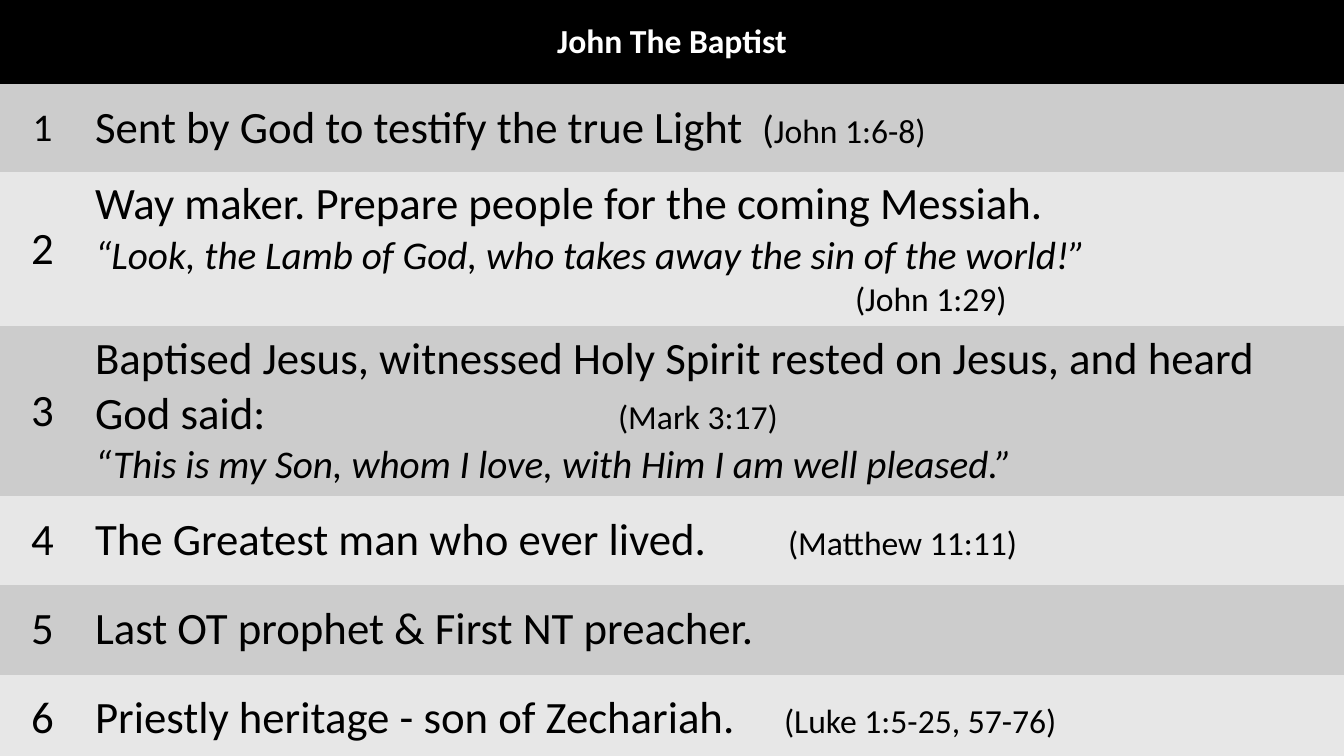
from dataclasses import dataclass

from lxml.etree import SubElement
from pptx import Presentation
from pptx.dml.color import RGBColor as RGB
from pptx.enum.text import MSO_ANCHOR as Anchor, PP_ALIGN as Align
from pptx.oxml.ns import qn
from pptx.util import Pt

EMU_PER_PX = 914400 / 100.8
NO_GRID_STYLE = "{2D5ABB26-0587-4C30-8999-92F81FD0307C}"


def px(length):
    return round(length * EMU_PER_PX)


@dataclass(frozen=True)
class Theme:
    font: str = "Calibri"
    black: RGB = RGB(0, 0, 0)
    white: RGB = RGB(255, 255, 255)
    bands: tuple = (RGB(0xCC, 0xCC, 0xCC), RGB(0xE7, 0xE7, 0xE7))
    point: int = 32
    quote: int = 28
    reference: int = 24
    heading: int = 24


THEME = Theme()


@dataclass(frozen=True)
class Line:
    """A paragraph: (text, size) runs, with an optional tab stop or indent in px."""
    runs: tuple
    tab: int = 0
    indent: int = 0
    italic: bool = False
    bold: bool = False
    align: Align = Align.LEFT


class SlideBuilder:
    def __init__(self, deck, theme):
        self.theme = theme
        self.slide = deck.slides.add_slide(deck.slide_layouts[6])
        backdrop = self.slide.background.fill
        backdrop.solid()
        backdrop.fore_color.rgb = theme.black

    def table(self, widths, heights):
        frame = self.slide.shapes.add_table(
            len(heights), len(widths), 0, 0, px(sum(widths)), px(sum(heights)))
        table = frame.table
        table.first_row = table.horz_banding = False
        table._tbl.tblPr.find(qn("a:tableStyleId")).text = NO_GRID_STYLE
        for column, width in zip(table.columns, widths):
            column.width = px(width)
        for row, height in zip(table.rows, heights):
            row.height = px(height)
        return table

    def cell(self, cell, lines, fill, color):
        cell.fill.solid()
        cell.fill.fore_color.rgb = fill
        cell.vertical_anchor = Anchor.MIDDLE
        frame = cell.text_frame
        for index, line in enumerate(lines):
            paragraph = frame.add_paragraph() if index else frame.paragraphs[0]
            self.line(paragraph, line, color)

    def line(self, paragraph, line, color):
        paragraph.alignment = line.align
        properties = paragraph._p.get_or_add_pPr()
        if line.indent:
            properties.set("marL", str(px(line.indent)))
            properties.set("indent", "0")
        if line.tab:
            stops = SubElement(properties, qn("a:tabLst"))
            SubElement(stops, qn("a:tab"), pos=str(px(line.tab)), algn="l")
        font = paragraph.font
        font.name = self.theme.font
        font.color.rgb = color
        font.bold, font.italic = line.bold, line.italic
        sizes = {size for _, size in line.runs}
        if len(sizes) == 1:
            font.size = Pt(sizes.pop())
        for text, size in line.runs:
            run = paragraph.add_run()
            run.text = text
            if sizes:
                run.font.size = Pt(size)


def point(text, reference="", tab=0):
    runs = ((text, THEME.point),)
    if reference:
        runs += (("\t" + reference, THEME.reference),)
    return Line(runs, tab=tab)


def quote(text):
    return Line(((text, THEME.quote),), italic=True)


# Row height, size of the number, and lines of each point
POINTS = [
    (88, THEME.quote, [Line((
        ("Sent by God to testify the true Light", THEME.point),
        ("\t(", THEME.quote),
        ("John 1:6-8)", THEME.reference)), tab=667)]),
    (147, THEME.point, [
        point("Way maker. Prepare people for the coming Messiah."),
        quote("“Look, the Lamb of God, who takes away the sin of the world!”"),
        Line((("(John 1:29)", THEME.reference),), indent=760)]),
    (170, THEME.point, [
        point("Baptised Jesus, witnessed Holy Spirit rested on Jesus, "
              "and heard God said:", "(Mark 3:17)", 523),
        quote("“This is my Son, whom I love, with Him I am well pleased.”")]),
    (89, THEME.point, [
        point("The Greatest man who ever lived.", "(Matthew 11:11)", 693)]),
    (90, THEME.point, [point("Last OT prophet & First NT preacher.")]),
    (88, THEME.point, [
        point("Priestly heritage - son of Zechariah.",
              "(Luke 1:5-25, 57-76)", 689)]),
]


def main():
    deck = Presentation()
    deck.slide_width, deck.slide_height = px(1344), px(756)
    builder = SlideBuilder(deck, THEME)
    table = builder.table([85, 1259], [84] + [height for height, _, _ in POINTS])

    # Heading across both columns
    heading = table.cell(0, 0)
    heading.merge(table.cell(0, 1))
    title = Line((("John The Baptist", THEME.heading),), bold=True, align=Align.CENTER)
    builder.cell(heading, [title], THEME.black, THEME.white)

    # Numbered points on alternating bands
    for number, (_, number_size, lines) in enumerate(POINTS, start=1):
        band = THEME.bands[(number - 1) % 2]
        label = Line(((str(number), number_size),), align=Align.CENTER)
        builder.cell(table.cell(number, 0), [label], band, THEME.black)
        builder.cell(table.cell(number, 1), lines, band, THEME.black)

    deck.save("out.pptx")


if __name__ == "__main__":
    main()
